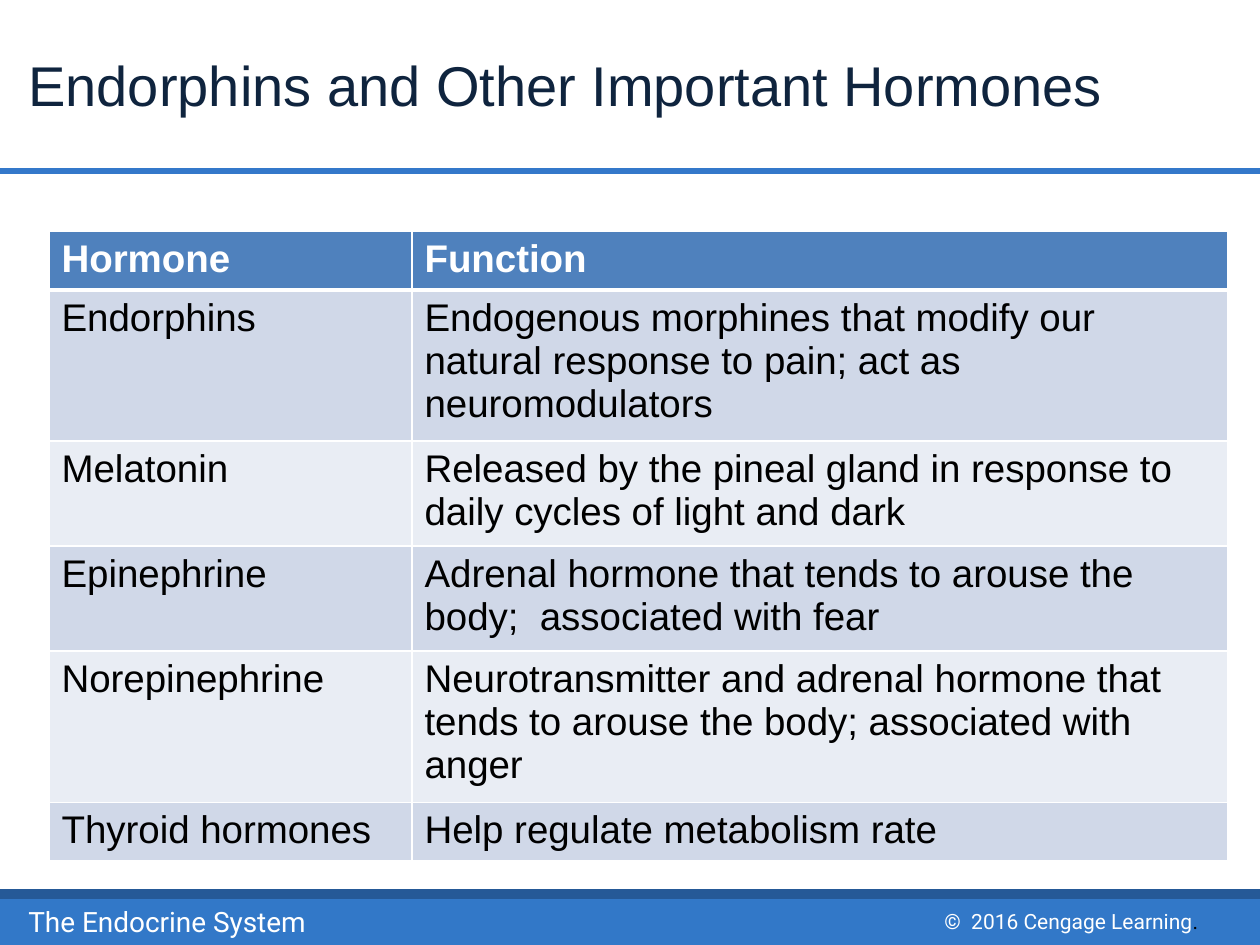
from dataclasses import dataclass

from lxml.etree import SubElement
from pptx import Presentation
from pptx.dml.color import RGBColor as RGB
from pptx.enum.shapes import MSO_SHAPE as Shape
from pptx.enum.text import MSO_ANCHOR as Anchor, MSO_AUTO_SIZE as Fit
from pptx.oxml.ns import qn
from pptx.util import Pt

SCALE = 914400 / 126  # EMU in one px


def px(n):
    return round(n * SCALE)


@dataclass(frozen=True)
class Theme:
    # Colours
    white: str = "FFFFFF"
    black: str = "000000"
    navy: str = "0F243E"
    band: str = "3278C8"
    strip: str = "255997"
    rule: str = "3478CA"
    head: str = "4F81BD"
    odd: str = "D0D8E8"
    even: str = "E9EDF4"
    # Fonts and sizes
    main: str = "Arial"
    foot: str = "Roboto"
    title: int = 32
    body: int = 22
    label: int = 16
    small: int = 12


class Deck:
    def __init__(self, theme):
        self.theme = theme
        self.prs = Presentation()
        self.prs.slide_width, self.prs.slide_height = px(1260), px(945)
        self.slide = self.prs.slides.add_slide(self.prs.slide_layouts[6])

    def run(self, para, text, size, color, font, bold=False):
        run = para.add_run()
        run.text = text
        run.font.name, run.font.size, run.font.bold = font, Pt(size), bold
        run.font.color.rgb = RGB.from_string(color)

    def bar(self, top, height, fill, line=None):
        bar = self.slide.shapes.add_shape(
            Shape.RECTANGLE, 0, px(top), px(1260), px(height))
        bar.shadow.inherit = False
        bar.fill.solid()
        bar.fill.fore_color.rgb = RGB.from_string(fill)
        if line:
            bar.line.color.rgb = RGB.from_string(line)
            bar.line.width = Pt(2.25)
        else:
            bar.line.fill.background()

    def text(self, left, top, width, height, runs, size, font,
             indent=0, anchor=Anchor.TOP, fit=Fit.SHAPE_TO_FIT_TEXT):
        box = self.slide.shapes.add_textbox(*map(px, (left, top, width, height)))
        frame = box.text_frame
        frame.word_wrap, frame.auto_size = True, fit
        frame.vertical_anchor = anchor
        para = frame.paragraphs[0]
        para._p.get_or_add_pPr().set("marL", str(px(indent)))
        for words, color in runs:
            self.run(para, words, size, color, font)

    def edge(self, cell, side, width):
        line = SubElement(cell._tc.get_or_add_tcPr(), qn(f"a:ln{side}"),
                          w=str(Pt(width)))
        fill = SubElement(line, qn("a:solidFill"))
        SubElement(fill, qn("a:srgbClr"), val=self.theme.white)

    def cell(self, cell, words, row):
        t = self.theme
        for side in "LRTB":
            thick = (row, side) in ((0, "B"), (1, "T"))
            self.edge(cell, side, 3 if thick else 1)
        fill = t.head if row == 0 else t.odd if row % 2 else t.even
        cell.fill.solid()
        cell.fill.fore_color.rgb = RGB.from_string(fill)
        self.run(cell.text_frame.paragraphs[0], words, t.body,
                 t.white if row == 0 else t.black, t.main, row == 0)

    def table(self, left, top, widths, rows):
        # Each row is as tall as its number of text lines
        highs = [43 * lines + 12 for *_, lines in rows]
        table = self.slide.shapes.add_table(
            len(rows), len(widths), px(left), px(top),
            px(sum(widths)), px(sum(highs))).table
        for col, width in zip(table.columns, widths):
            col.width = px(width)
        for r, (*words, _) in enumerate(rows):
            table.rows[r].height = px(highs[r])
            for c, word in enumerate(words):
                self.cell(table.cell(r, c), word, r)


# Hormone, function, lines of text
ROWS = [
    ("Hormone", "Function", 1),
    ("Endorphins", "Endogenous morphines that modify our natural response "
     "to pain; act as neuromodulators", 3),
    ("Melatonin", "Released by the pineal gland in response to daily cycles "
     "of light and dark", 2),
    ("Epinephrine", "Adrenal hormone that tends to arouse the body;  "
     "associated with fear", 2),
    ("Norepinephrine", "Neurotransmitter and adrenal hormone that tends to "
     "arouse the body; associated with anger", 3),
    ("Thyroid hormones", "Help regulate metabolism rate", 1),
]


def main():
    t = Theme()
    deck = Deck(t)

    # Footer
    deck.bar(893, 52, t.band)
    deck.text(932, 902, 328, 38, [("©  2016 Cengage Learning", t.white),
                                  (".", t.black)], t.small, t.foot)
    deck.bar(891, 6, t.strip, t.strip)
    deck.text(0, 898, 630, 47, [("The Endocrine System", t.white)],
              t.label, t.foot, indent=16)

    # Title
    deck.bar(170, 2, t.head, t.rule)
    deck.text(0, 0, 1260, 169,
              [("Endorphins and Other Important Hormones", t.navy)],
              t.title, t.main, indent=16, anchor=Anchor.MIDDLE, fit=Fit.NONE)

    # Hormone table
    deck.table(49, 231, (363, 816), ROWS)

    deck.prs.save("out.pptx")


if __name__ == "__main__":
    main()
